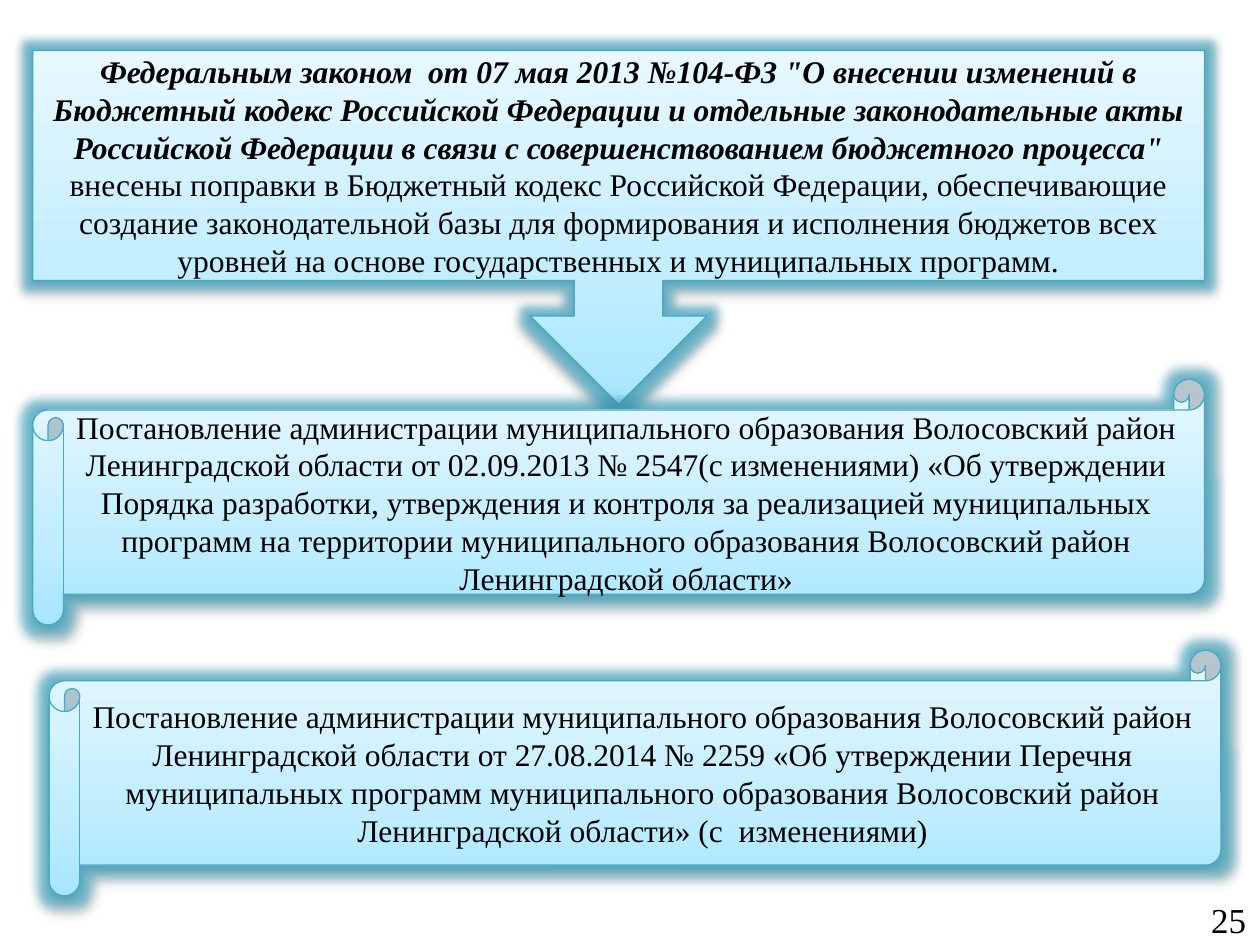
from copy import deepcopy

from lxml.etree import SubElement
from pptx import Presentation
from pptx.dml.color import RGBColor
from pptx.enum.shapes import MSO_SHAPE
from pptx.enum.text import MSO_ANCHOR, PP_ALIGN
from pptx.oxml.ns import qn
from pptx.util import Inches, Pt

COLORS = {"text": "000000", "line": "46AAC5", "glow": "31A9C9", "shadow": "000000"}
GRADIENT = [(0, "A7E6FF"), (0.35, "C1EDFF"), (1, "E7F8FF")]
FONT = "Times New Roman"
BOLD_ITALIC = {"bold": True, "italic": True}
PANEL_WIDTH = 9.3
SCROLL_HEIGHT = 1.95

# Content: preset, left, top, height, runs of (text, font values)
PANELS = [
    (MSO_SHAPE.DOWN_ARROW_CALLOUT, 0.26, 0.4, 2.81, [
        ('Федеральным законом  от 07 мая 2013 №104-ФЗ "О внесении изменений в '
         "Бюджетный кодекс Российской Федерации и отдельные законодательные акты "
         "Российской Федерации в связи с совершенствованием бюджетного "
         'процесса" ', BOLD_ITALIC),
        ("внесены поправки в Бюджетный кодекс Российской Федерации, "
         "обеспечивающие создание законодательной базы для формирования и "
         "исполнения бюджетов всех уровней на основе государственных и "
         "муниципальных программ.", {}),
    ]),
    (MSO_SHAPE.HORIZONTAL_SCROLL, 0.26, 3.01, SCROLL_HEIGHT, [
        ("Постановление администрации муниципального образования Волосовский "
         "район Ленинградской области от 02.09.2013 № 2547(с изменениями) «Об "
         "утверждении Порядка разработки, утверждения и контроля за реализацией "
         "муниципальных программ на территории муниципального образования "
         "Волосовский район Ленинградской области»", {}),
    ]),
    (MSO_SHAPE.HORIZONTAL_SCROLL, 0.39, 5.16, SCROLL_HEIGHT, [
        ("Постановление администрации муниципального образования Волосовский "
         "район Ленинградской области от 27.08.2014 № 2259 «Об утверждении "
         "Перечня муниципальных программ муниципального образования Волосовский "
         "район Ленинградской области» (с  изменениями)", {}),
    ]),
]
PAGE_NUMBER = "25"


def write_text(shape, runs, size, alignment):
    frame = shape.text_frame
    frame.word_wrap = True
    frame.vertical_anchor = MSO_ANCHOR.MIDDLE
    paragraph = frame.paragraphs[0]
    paragraph.alignment = alignment
    for text, values in runs:
        run = paragraph.add_run()
        run.text = text
        for name, value in {"name": FONT, "size": Pt(size), **values}.items():
            setattr(run.font, name, value)
        run.font.color.rgb = RGBColor.from_string(COLORS["text"])


def fill_gradient(shape):
    shape.fill.gradient()
    shape.fill.gradient_angle = 90
    first = shape._element.spPr.find(".//" + qn("a:gs"))
    first.addnext(deepcopy(first))
    for stop, (position, color) in zip(shape.fill.gradient_stops, GRADIENT):
        stop.position = position
        stop.color.rgb = RGBColor.from_string(color)


def add_effects(shape):
    shape.shadow.inherit = False
    effects = shape._element.spPr.find(qn("a:effectLst"))
    for tag, color, alpha, values in [
        ("a:glow", "glow", 60, {"rad": Pt(11)}),
        ("a:outerShdw", "shadow", 38,
         {"blurRad": Pt(3.1), "dist": Pt(1.6), "dir": 90 * 60000, "rotWithShape": 0}),
    ]:
        effect = SubElement(effects, qn(tag), {k: str(int(v)) for k, v in values.items()})
        tint = SubElement(effect, qn("a:srgbClr"), val=COLORS[color])
        SubElement(tint, qn("a:alpha"), val=str(alpha * 1000))


presentation = Presentation()
presentation.slide_width, presentation.slide_height = Inches(10), Inches(7.5)
slide = presentation.slides.add_slide(presentation.slide_layouts[6])

# Law callout and the two decree scrolls
for preset, left, top, height, runs in PANELS:
    panel = slide.shapes.add_shape(
        preset, Inches(left), Inches(top), Inches(PANEL_WIDTH), Inches(height))
    fill_gradient(panel)
    panel.line.color.rgb = RGBColor.from_string(COLORS["line"])
    panel.line.width = Pt(0.75)
    add_effects(panel)
    write_text(panel, runs, 18, PP_ALIGN.CENTER)

# Page number
page_number = slide.shapes.add_textbox(Inches(7.66), Inches(7.1), Inches(2.33), Inches(0.4))
write_text(page_number, [(PAGE_NUMBER, {})], 20, PP_ALIGN.RIGHT)

presentation.save("out.pptx")
